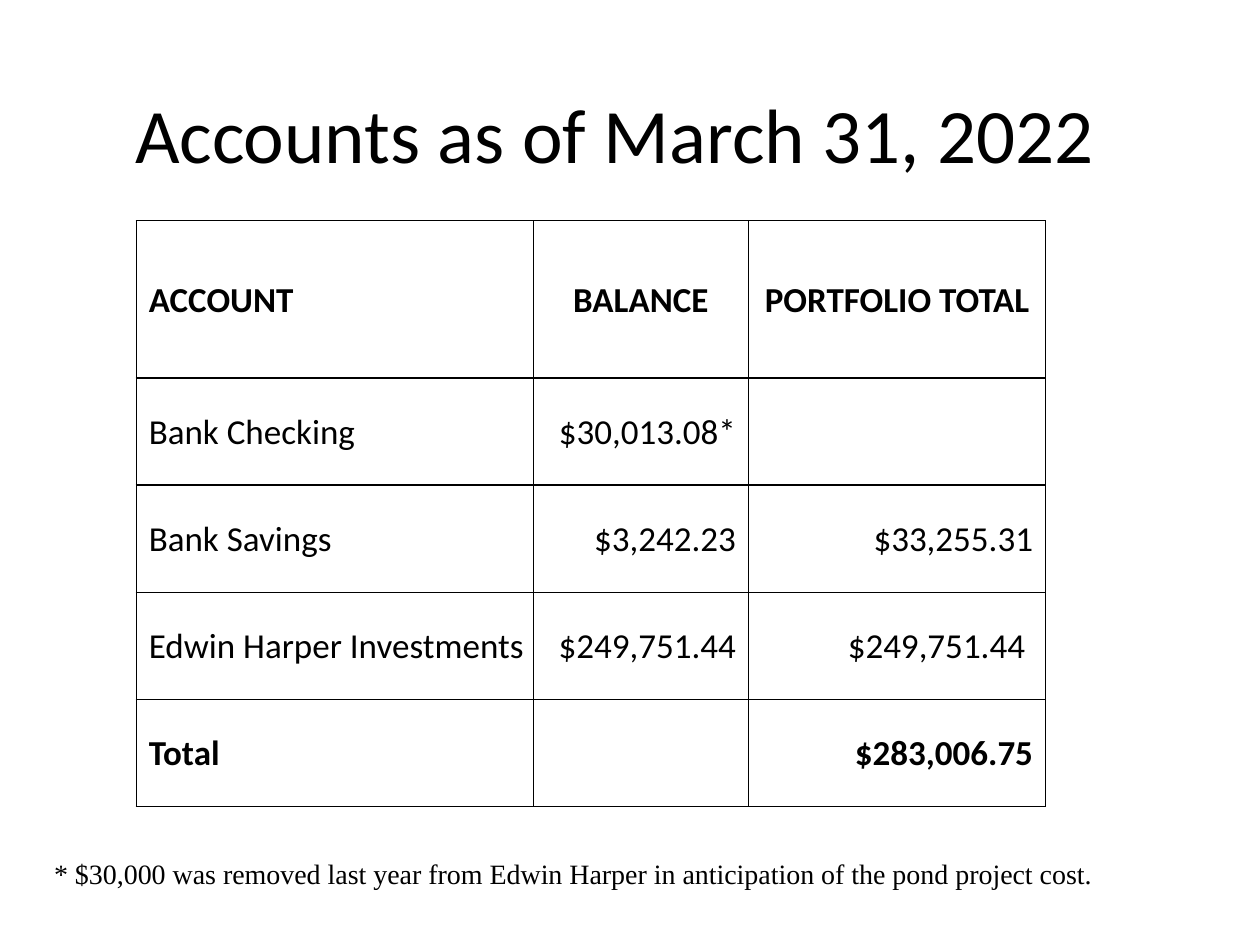
from lxml.etree import SubElement
from pptx import Presentation
from pptx.dml.color import RGBColor
from pptx.enum.text import MSO_ANCHOR, PP_ALIGN
from pptx.oxml.ns import qn
from pptx.util import Cm, Pt

BLACK = RGBColor(0x00, 0x00, 0x00)
WHITE = RGBColor(0xFF, 0xFF, 0xFF)


def write(tf, text, size=20, font="Calibri", bold=False, align=PP_ALIGN.LEFT):
    p = tf.paragraphs[0]
    p.alignment = align
    r = p.add_run()
    r.text = text
    r.font.size = Pt(size)
    r.font.name = font
    r.font.bold = bold
    r.font.color.rgb = BLACK


def add_borders(cell):
    tc_pr = cell._tc.get_or_add_tcPr()
    for i, side in enumerate(("lnL", "lnR", "lnT", "lnB")):
        ln = tc_pr.makeelement(qn(f"a:{side}"), {"w": str(Pt(1))})
        fill = SubElement(ln, qn("a:solidFill"))
        SubElement(fill, qn("a:srgbClr"), val=str(BLACK))
        tc_pr.insert(i, ln)  # borders come before the cell fill


prs = Presentation()
prs.slide_width, prs.slide_height = Cm(25.4), Cm(19.05)
s = prs.slides.add_slide(prs.slide_layouts[6])

# Title
tf = s.shapes.add_textbox(Cm(0.66), Cm(0.94), Cm(23.47), Cm(3.48)).text_frame
tf.word_wrap = True
tf.vertical_anchor = MSO_ANCHOR.MIDDLE
write(tf, "Accounts as of March 31, 2022", size=44, align=PP_ALIGN.CENTER)

# Accounts table
rows = [
    ("ACCOUNT", "BALANCE", "PORTFOLIO TOTAL"),
    ("Bank Checking", "$30,013.08*", ""),
    ("Bank Savings", "$3,242.23", "$33,255.31"),
    ("Edwin Harper Investments", "$249,751.44", "$249,751.44 "),
    ("Total", "", "$283,006.75"),
]
col_widths = [Cm(8), Cm(4.34), Cm(5.99)]
row_heights = [Cm(3.17)] + [Cm(2.16)] * 4
table = s.shapes.add_table(len(rows), len(col_widths), Cm(2.75), Cm(4.45),
                           sum(col_widths), sum(row_heights)).table
for col, width in zip(table.columns, col_widths):
    col.width = width
for row, height in zip(table.rows, row_heights):
    row.height = height

for i, values in enumerate(rows):
    for j, value in enumerate(values):
        cell = table.cell(i, j)
        cell.fill.solid()
        cell.fill.fore_color.rgb = WHITE
        cell.vertical_anchor = MSO_ANCHOR.MIDDLE
        cell.margin_left = Cm(0.25)
        cell.margin_right = Cm(0.25 if j else 0.03)
        cell.margin_top, cell.margin_bottom = Cm(0.03), Cm(0)
        add_borders(cell)
        if j == 0:
            align = PP_ALIGN.LEFT
        else:
            align = PP_ALIGN.RIGHT if i else PP_ALIGN.CENTER
        if value:
            write(cell.text_frame, value, bold=i in (0, len(rows) - 1), align=align)

# Footnote
tf = s.shapes.add_textbox(Cm(0.84), Cm(17.15), Cm(23.93), Cm(0.94)).text_frame
tf.word_wrap = True
write(tf, "* $30,000 was removed last year from Edwin Harper in anticipation "
          "of the pond project cost.", size=16, font="Times New Roman")

prs.save("out.pptx")
